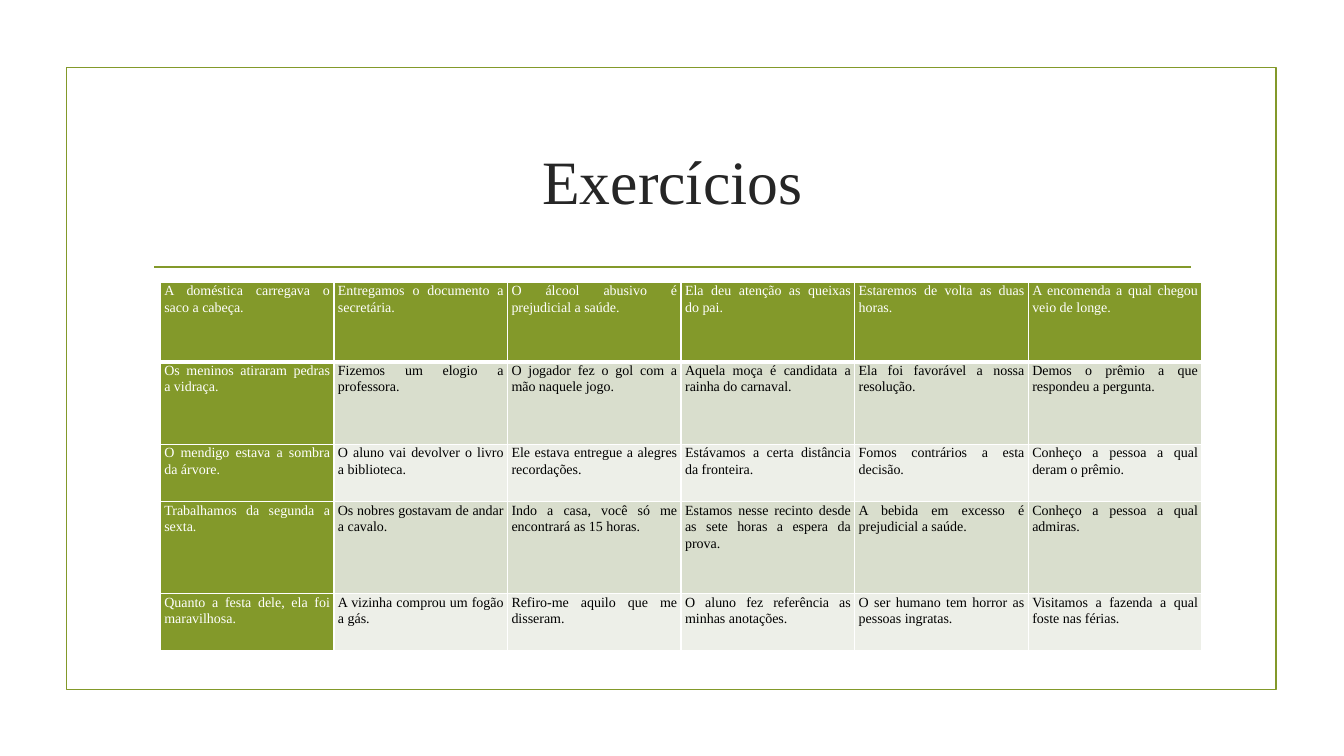
from lxml.etree import SubElement
from pptx import Presentation
from pptx.dml.color import RGBColor
from pptx.enum.shapes import MSO_CONNECTOR, MSO_SHAPE
from pptx.enum.text import MSO_ANCHOR, PP_ALIGN
from pptx.oxml.ns import qn
from pptx.util import Inches, Pt

GREEN, WHITE, BLACK, DARK = "83992A", "FFFFFF", "000000", "262626"
BANDS = ["D9DECD", "EDEFE8"]
ROW_HEIGHTS = [0.79, 0.82, 0.57, 0.91, 0.57]
SENTENCES = [
    ["A doméstica carregava o saco a cabeça.",
     "Entregamos o documento a secretária.",
     "O álcool abusivo é prejudicial a saúde.",
     "Ela deu atenção as queixas do pai.",
     "Estaremos de volta as duas horas.",
     "A encomenda a qual chegou veio de longe."],
    ["Os meninos atiraram pedras a vidraça.",
     "Fizemos um elogio a professora.",
     "O jogador fez o gol com a mão naquele jogo.",
     "Aquela moça é candidata a rainha do carnaval.",
     "Ela foi favorável a nossa resolução.",
     "Demos o prêmio a que respondeu a pergunta."],
    ["O mendigo estava a sombra da árvore.",
     "O aluno vai devolver o livro a biblioteca.",
     "Ele estava entregue a alegres recordações.",
     "Estávamos a certa distância da fronteira.",
     "Fomos contrários a esta decisão.",
     "Conheço a pessoa a qual deram o prêmio."],
    ["Trabalhamos da segunda a sexta.",
     "Os nobres gostavam de andar a cavalo.",
     "Indo a casa, você só me encontrará as 15 horas.",
     "Estamos nesse recinto desde as sete horas a espera da prova.",
     "A bebida em excesso é prejudicial a saúde.",
     "Conheço a pessoa a qual admiras."],
    ["Quanto a festa dele, ela foi maravilhosa.",
     "A vizinha comprou um fogão a gás.",
     "Refiro-me aquilo que me disseram.",
     "O aluno fez referência as minhas anotações.",
     "O ser humano tem horror as pessoas ingratas.",
     "Visitamos a fazenda a qual foste nas férias."],
]


def rgb(color):
    return RGBColor.from_string(color)


def write(tf, text, size=10, color=BLACK, align=PP_ALIGN.JUSTIFY, spacing=1.07):
    tf.word_wrap = True
    p = tf.paragraphs[0]
    p.alignment = align
    p.line_spacing = spacing
    r = p.add_run()
    r.text = text
    r.font.name = "Times New Roman"
    r.font.size = Pt(size)
    r.font.color.rgb = rgb(color)


def style_line(line):
    line.color.rgb = rgb(GREEN)
    line.width = Pt(1.25)


def add_frame(slide, x, y, w, h):
    s = slide.shapes.add_shape(MSO_SHAPE.RECTANGLE, Inches(x), Inches(y), Inches(w), Inches(h))
    s.shadow.inherit = False
    s.fill.background()
    style_line(s.line)


def add_heading(slide, text, x, y, w, h):
    s = slide.shapes.title
    s.left, s.top, s.width, s.height = Inches(x), Inches(y), Inches(w), Inches(h)
    s.text_frame.vertical_anchor = MSO_ANCHOR.MIDDLE
    write(s.text_frame, text, size=44, color=DARK, align=PP_ALIGN.CENTER, spacing=1.0)
    # Rule below the title
    rule_y = Inches(y + h + 0.15)
    rule = slide.shapes.add_connector(
        MSO_CONNECTOR.STRAIGHT, Inches(x + 0.11), rule_y, Inches(x + w - 0.11), rule_y)
    style_line(rule.line)
    SubElement(rule._element.spPr, qn("a:effectLst"))


def set_borders(cell, **widths):
    tcPr = cell._tc.get_or_add_tcPr()
    for i, side in enumerate(["L", "R", "T", "B"]):
        ln = tcPr.makeelement(qn(f"a:ln{side}"), {"w": str(Pt(widths.get(side, 1)))})
        fill = SubElement(ln, qn("a:solidFill"))
        SubElement(fill, qn("a:srgbClr"), val=WHITE)
        tcPr.insert(i, ln)


def add_exercises(slide, x, y, w):
    n_rows, n_cols = len(SENTENCES), len(SENTENCES[0])
    table = slide.shapes.add_table(
        n_rows, n_cols, Inches(x), Inches(y), Inches(w), Inches(sum(ROW_HEIGHTS))).table
    for col in table.columns:
        col.width = Inches(w / n_cols)
    for i, (height, sentences) in enumerate(zip(ROW_HEIGHTS, SENTENCES)):
        table.rows[i].height = Inches(height)
        for j, sentence in enumerate(sentences):
            cell = table.cell(i, j)
            header = i == 0 or j == 0
            cell.margin_left = cell.margin_right = Inches(0.04)
            cell.margin_top = cell.margin_bottom = 0
            cell.fill.solid()
            cell.fill.fore_color.rgb = rgb(GREEN if header else BANDS[(i - 1) % 2])
            # Thick border between the header row and the body
            set_borders(cell, B=3 if i == 0 else 1, T=3 if i == 1 else 1)
            write(cell.text_frame, sentence, color=WHITE if header else BLACK)


def main():
    prs = Presentation()
    prs.slide_width, prs.slide_height = Inches(13.33), Inches(7.5)
    slide = prs.slides.add_slide(prs.slide_layouts[5])
    add_frame(slide, 0.66, 0.67, 12, 6.17)
    add_heading(slide, "Exercícios", 1.42, 1.07, 10.5, 1.43)
    add_exercises(slide, 1.59, 2.8, 10.33)
    prs.save("out.pptx")


if __name__ == "__main__":
    main()
